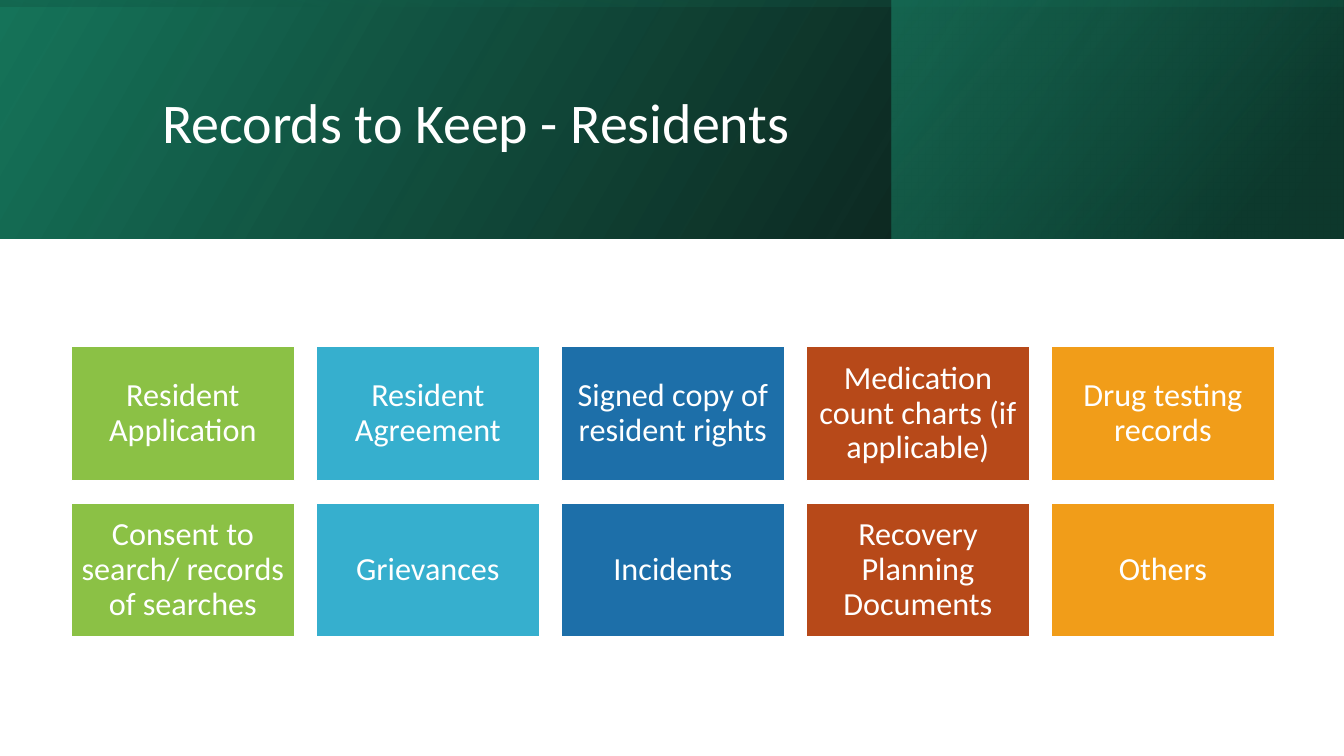
from typing import NamedTuple

from pptx import Presentation
from pptx.dml.color import RGBColor
from pptx.enum.shapes import MSO_SHAPE as Preset
from pptx.enum.text import MSO_ANCHOR as Anchor, PP_ALIGN as Align
from pptx.oxml.ns import qn
from pptx.oxml.xmlchemy import OxmlElement
from pptx.slide import Slide
from pptx.text.text import TextFrame
from pptx.util import Inches, Pt

WHITE = RGBColor(0xFF, 0xFF, 0xFF)
BLACK = RGBColor(0x00, 0x00, 0x00)
GREEN = RGBColor(0x16, 0x74, 0x5A)
DEEP_GREEN = RGBColor(0x0E, 0x4D, 0x3C)
BRIGHT_GREEN = RGBColor(0x1D, 0x9A, 0x78)
LIME = RGBColor(0x8B, 0xC1, 0x45)
SKY = RGBColor(0x36, 0xAF, 0xCE)
BLUE = RGBColor(0x1D, 0x6F, 0xA9)
RUST = RGBColor(0xB7, 0x49, 0x19)
ORANGE = RGBColor(0xF1, 0x9D, 0x19)

FONT = "Calibri"
SLIDE_WIDTH, SLIDE_HEIGHT = 13.33, 7.5
BANNER_HEIGHT = 2.37
GRID_LEFT, GRID_TOP = 0.71, 3.44
TILE_WIDTH, TILE_HEIGHT = 2.21, 1.33
COLUMN_STEP, ROW_STEP = 2.43, 1.55


class Stop(NamedTuple):
    position: float
    color: RGBColor
    opacity: int


class Band(NamedTuple):
    left: float
    top: float
    width: float
    height: float
    angle: int
    stops: tuple[Stop, Stop]
    rotation: int = 0


BANDS = (
    Band(0, 0, SLIDE_WIDTH, BANNER_HEIGHT, 30,
         (Stop(0, BLACK, 96), Stop(1, GREEN, 100))),
    Band(8.84, 0, 4.48, BANNER_HEIGHT, 40,
         (Stop(0.19, DEEP_GREEN, 68), Stop(1, BRIGHT_GREEN, 48))),
    Band(5.48, -5.48, BANNER_HEIGHT, SLIDE_WIDTH, 10,
         (Stop(0.23, GREEN, 16), Stop(0.99, BLACK, 45)), rotation=270),
)
COLUMN_COLORS = (LIME, SKY, BLUE, RUST, ORANGE)
RECORDS = (
    ("Resident Application", "Resident Agreement", "Signed copy of resident rights",
     "Medication count charts (if applicable)", "Drug testing records"),
    ("Consent to search/ records of searches", "Grievances", "Incidents",
     "Recovery Planning Documents", "Others"),
)


def write_text(frame: TextFrame, text: str, size: int, align: Align) -> None:
    frame.word_wrap = True
    frame.vertical_anchor = Anchor.MIDDLE
    paragraph = frame.paragraphs[0]
    paragraph.alignment = align
    paragraph.line_spacing = 0.9
    run = paragraph.add_run()
    run.text = text
    run.font.name = FONT
    run.font.size = Pt(size)
    run.font.color.rgb = WHITE


def add_band(slide: Slide, band: Band) -> None:
    """Add a mirrored rectangle with a translucent two-stop gradient."""
    shape = slide.shapes.add_shape(
        Preset.RECTANGLE, Inches(band.left), Inches(band.top),
        Inches(band.width), Inches(band.height))
    shape.shadow.inherit = False
    shape.rotation = band.rotation
    shape.line.fill.background()
    shape.fill.gradient()
    shape.fill.gradient_angle = band.angle
    for gradient_stop, stop in zip(shape.fill.gradient_stops, band.stops):
        gradient_stop.position = stop.position
        gradient_stop.color.rgb = stop.color
    properties = shape.element.spPr
    properties.find(qn("a:xfrm")).set("flipH", "1")
    for color, stop in zip(properties.iter(qn("a:srgbClr")), band.stops):
        alpha = OxmlElement("a:alpha")
        alpha.set("val", str(stop.opacity * 1000))
        color.append(alpha)


def add_title(slide: Slide, text: str) -> None:
    title = slide.shapes.title
    slide.shapes.element.append(title.element)  # bring in front of the bands
    title.left, title.top = Inches(1.51), Inches(0.38)
    title.width, title.height = Inches(10.63), Inches(1.72)
    write_text(title.text_frame, text, 40, Align.LEFT)


def add_tile(slide: Slide, row: int, column: int, text: str) -> None:
    tile = slide.shapes.add_shape(
        Preset.RECTANGLE,
        Inches(GRID_LEFT + column * COLUMN_STEP), Inches(GRID_TOP + row * ROW_STEP),
        Inches(TILE_WIDTH), Inches(TILE_HEIGHT))
    tile.shadow.inherit = False
    tile.fill.solid()
    tile.fill.fore_color.rgb = COLUMN_COLORS[column]
    tile.line.color.rgb = WHITE
    tile.line.width = Pt(1)
    frame = tile.text_frame
    frame.margin_left = frame.margin_right = Inches(0.1)
    frame.margin_top = frame.margin_bottom = Inches(0.1)
    write_text(frame, text, 23, Align.CENTER)


def main() -> None:
    presentation = Presentation()
    presentation.slide_width = Inches(SLIDE_WIDTH)
    presentation.slide_height = Inches(SLIDE_HEIGHT)
    slide = presentation.slides.add_slide(presentation.slide_layouts[5])
    for band in BANDS:
        add_band(slide, band)
    add_title(slide, "Records to Keep - Residents")
    for row, texts in enumerate(RECORDS):
        for column, text in enumerate(texts):
            add_tile(slide, row, column, text)
    presentation.save("out.pptx")


if __name__ == "__main__":
    main()
